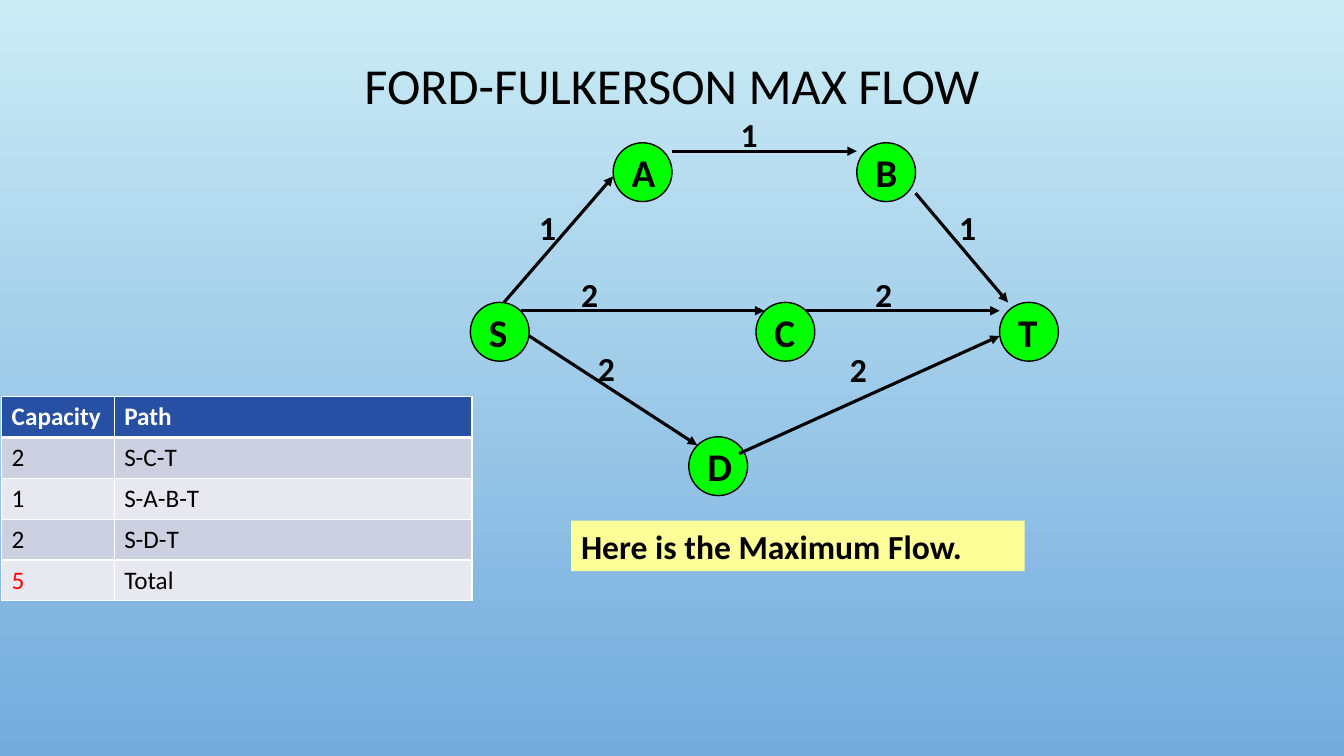
from dataclasses import dataclass

from lxml.etree import SubElement
from pptx import Presentation
from pptx.dml.color import RGBColor
from pptx.enum.shapes import MSO_CONNECTOR as Connector, MSO_SHAPE as Shape
from pptx.enum.text import MSO_ANCHOR as Anchor, PP_ALIGN as Align
from pptx.oxml.ns import qn
from pptx.slide import Slide
from pptx.table import _Cell as Cell
from pptx.text.text import TextFrame
from pptx.util import Inches, Length, Pt

# The slide is a grid of 160 columns by 90 rows, each 1/12 inch.
COLUMNS, ROWS = 160, 90
NODE_SIZE = 7
LABEL_SIZE = (7, 6)
TABLE_AT = (0.2, 47.2)
TABLE_COLUMNS = (13.4, 42.6)
TABLE_ROW = 4.87

FONT = "Calibri"
BLACK = RGBColor(0x00, 0x00, 0x00)
WHITE = RGBColor(0xFF, 0xFF, 0xFF)
RED = RGBColor(0xFF, 0x00, 0x00)
GREEN = RGBColor(0x00, 0xFF, 0x00)
YELLOW = RGBColor(0xFF, 0xFF, 0x99)
SKY_TOP = RGBColor(0xCB, 0xEC, 0xF5)
SKY_BOTTOM = RGBColor(0x73, 0xAB, 0xDD)
HEADER_BLUE = RGBColor(0x27, 0x4F, 0xA4)
BAND_DARK = RGBColor(0xCD, 0xD0, 0xE0)
BAND_LIGHT = RGBColor(0xE8, 0xE9, 0xF0)


@dataclass(frozen=True)
class Node:
    name: str
    column: int
    row: int


@dataclass(frozen=True)
class Edge:
    start: tuple[int, int]
    end: tuple[int, int]
    flow: str
    label_at: tuple[float, float]


NODES = (
    Node("S", 56, 36), Node("A", 73, 17), Node("C", 90, 36),
    Node("B", 102, 17), Node("D", 82, 52), Node("T", 119, 36),
)
EDGES = (
    Edge((63, 40), (83, 53), "2", (70, 40.8)),
    Edge((60, 36), (73, 21), "1", (63, 24)),
    Edge((62, 37), (91, 37), "2", (68, 32)),
    Edge((80, 18), (102, 18), "1", (87, 13)),
    Edge((96, 37), (119, 37), "2", (103, 32)),
    Edge((88, 54), (119, 40), "2", (100, 41)),
    Edge((109, 23), (120, 36), "1", (113, 24)),
)
PATHS = (
    ("Capacity", "Path"),
    ("2", "S-C-T"),
    ("1", "S-A-B-T"),
    ("2", "S-D-T"),
    ("5", "Total"),
)


def grid(*units: float) -> list[Length]:
    """Turn grid units into slide lengths."""
    return [Inches(unit / 12) for unit in units]


def write(frame: TextFrame, text: str, size: int, color: RGBColor = BLACK,
          bold: bool = True, align: Align = Align.LEFT) -> None:
    paragraph = frame.paragraphs[0]
    paragraph.alignment = align
    run = paragraph.add_run()
    run.text = text
    run.font.name = FONT
    run.font.size = Pt(size)
    run.font.bold = bold
    run.font.color.rgb = color


def paint_background(slide: Slide) -> None:
    fill = slide.background.fill
    fill.gradient()
    fill.gradient_angle = 270
    for stop, color in zip(fill.gradient_stops, (SKY_TOP, SKY_BOTTOM)):
        stop.color.rgb = color


def add_title(slide: Slide) -> None:
    frame = slide.shapes.add_textbox(*grid(12, 5.6, 136, 9.7)).text_frame
    frame.word_wrap = True
    frame.vertical_anchor = Anchor.MIDDLE
    frame.paragraphs[0].line_spacing = 0.9
    write(frame, "FORD-FULKERSON MAX FLOW", 36, bold=False, align=Align.CENTER)


def add_flow_label(slide: Slide, edge: Edge) -> None:
    frame = slide.shapes.add_textbox(*grid(*edge.label_at, *LABEL_SIZE)).text_frame
    frame.word_wrap = True
    write(frame, edge.flow, 24)


def add_node(slide: Slide, node: Node) -> None:
    shape = slide.shapes.add_shape(
        Shape.OVAL, *grid(node.column, node.row, NODE_SIZE, NODE_SIZE))
    shape.shadow.inherit = False
    shape.fill.solid()
    shape.fill.fore_color.rgb = GREEN
    shape.line.color.rgb = BLACK
    shape.line.width = Pt(1)
    shape.text_frame.word_wrap = False
    shape.text_frame.vertical_anchor = Anchor.MIDDLE
    write(shape.text_frame, node.name, 28)


def add_arrow(slide: Slide, edge: Edge) -> None:
    arrow = slide.shapes.add_connector(
        Connector.STRAIGHT, *grid(*edge.start, *edge.end))
    arrow.line.color.rgb = BLACK
    arrow.line.width = Pt(2.25)
    SubElement(arrow.line._get_or_add_ln(), qn("a:tailEnd"), type="triangle")
    SubElement(arrow._element.spPr, qn("a:effectLst"))


def add_caption(slide: Slide) -> None:
    shape = slide.shapes.add_shape(Shape.RECTANGLE, *grid(68, 62, 54, 6))
    shape.shadow.inherit = False
    shape.fill.solid()
    shape.fill.fore_color.rgb = YELLOW
    shape.line.fill.background()
    shape.text_frame.word_wrap = True
    shape.text_frame.vertical_anchor = Anchor.TOP
    write(shape.text_frame, "Here is the Maximum Flow.", 24)


def add_borders(cell: Cell, top: int, bottom: int) -> None:
    """Draw white cell borders; top and bottom are widths in points."""
    properties = cell._tc.get_or_add_tcPr()
    for side, width in (("L", 1), ("R", 1), ("T", top), ("B", bottom)):
        line = SubElement(properties, qn(f"a:ln{side}"), w=str(Pt(width)))
        fill = SubElement(line, qn("a:solidFill"))
        SubElement(fill, qn("a:srgbClr"), val=str(WHITE))


def add_path_table(slide: Slide) -> None:
    size = (sum(TABLE_COLUMNS), TABLE_ROW * len(PATHS))
    table = slide.shapes.add_table(
        len(PATHS), len(TABLE_COLUMNS), *grid(*TABLE_AT, *size)).table
    for column, width in zip(table.columns, grid(*TABLE_COLUMNS)):
        column.width = width
    for row_index, texts in enumerate(PATHS):
        header = row_index == 0
        band = BAND_DARK if row_index % 2 else BAND_LIGHT
        for column_index, text in enumerate(texts):
            cell = table.cell(row_index, column_index)
            add_borders(cell, 3 if row_index == 1 else 1, 3 if header else 1)
            cell.fill.solid()
            cell.fill.fore_color.rgb = HEADER_BLUE if header else band
            is_total = row_index == len(PATHS) - 1 and column_index == 0
            color = WHITE if header else RED if is_total else BLACK
            write(cell.text_frame, text, 18, color, bold=header)


def main() -> None:
    presentation = Presentation()
    presentation.slide_width, presentation.slide_height = grid(COLUMNS, ROWS)
    slide = presentation.slides.add_slide(presentation.slide_layouts[6])
    paint_background(slide)
    add_title(slide)
    for edge in EDGES:
        add_flow_label(slide, edge)
    for node in NODES:
        add_node(slide, node)
    for edge in EDGES:
        add_arrow(slide, edge)
    add_caption(slide)
    add_path_table(slide)
    presentation.save("out.pptx")


if __name__ == "__main__":
    main()
